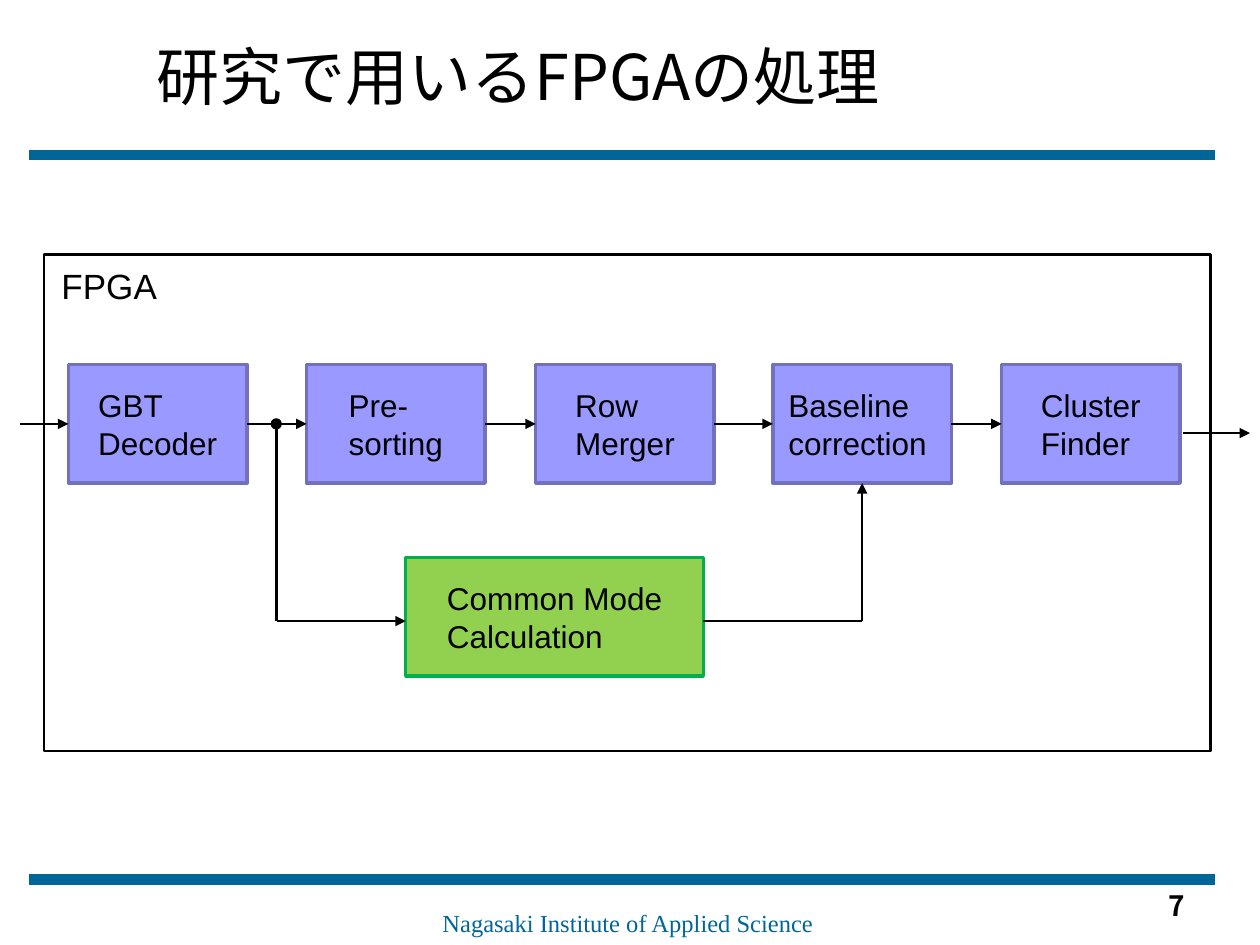
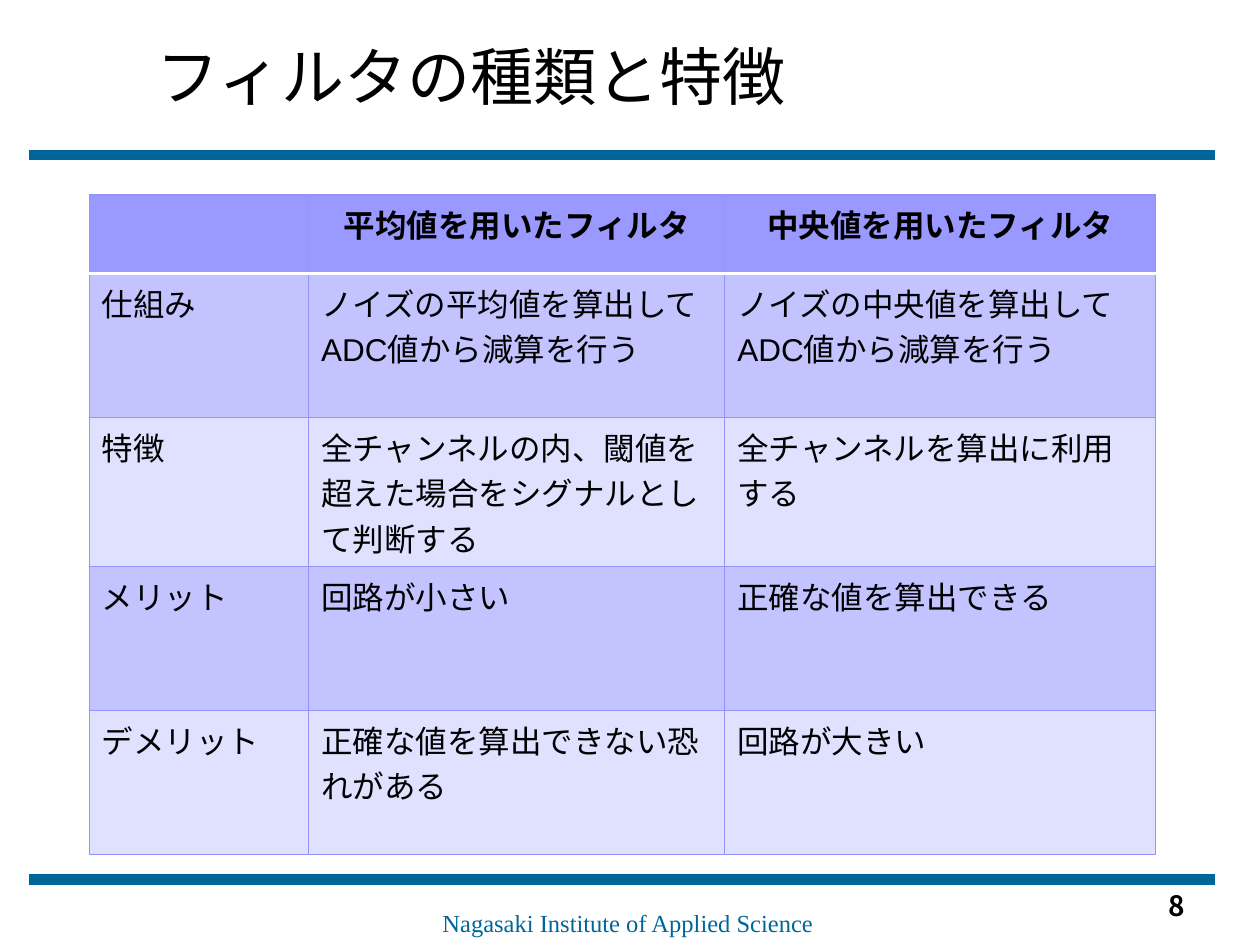
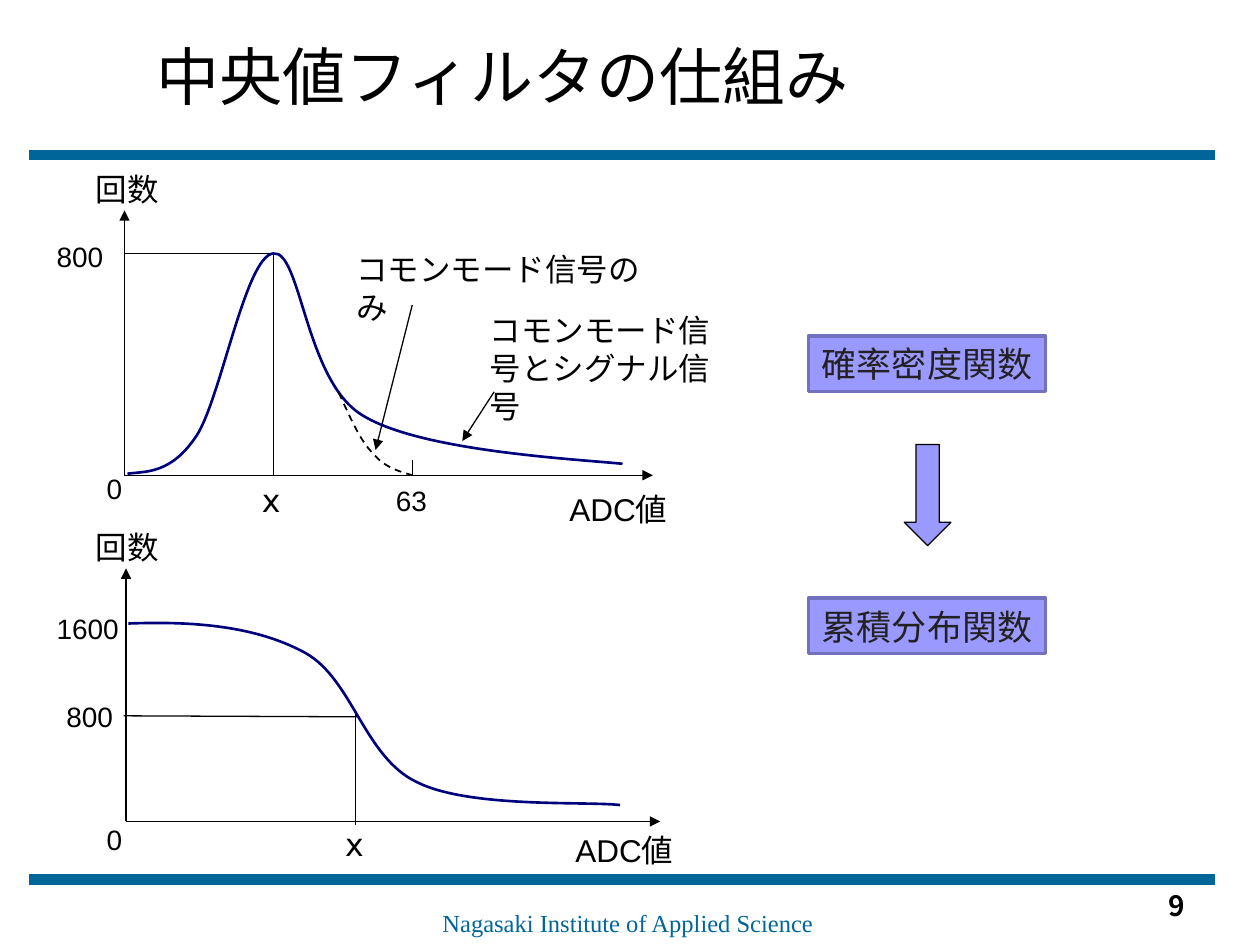
"""Build three slides on FPGA processing and the median filter."""
from dataclasses import dataclass

from lxml import etree
from pptx import Presentation
from pptx.dml.color import RGBColor
from pptx.enum.dml import MSO_LINE
from pptx.enum.shapes import MSO_CONNECTOR, MSO_SHAPE
from pptx.enum.text import MSO_ANCHOR, MSO_AUTO_SIZE, PP_ALIGN
from pptx.oxml.ns import qn
from pptx.util import Cm, Pt

STRAIGHT = MSO_CONNECTOR.STRAIGHT
RECT = MSO_SHAPE.RECTANGLE
DOT = MSO_SHAPE.FLOWCHART_CONNECTOR
DOWN = MSO_SHAPE.DOWN_ARROW
LEFT, CENTER = PP_ALIGN.LEFT, PP_ALIGN.CENTER
TOP, MIDDLE = MSO_ANCHOR.TOP, MSO_ANCHOR.MIDDLE
DASH = MSO_LINE.DASH
NO_FIT = MSO_AUTO_SIZE.NONE


@dataclass(frozen=True)
class Theme:
    latin: str = "Arial"
    cjk: str = "Noto Sans CJK JP"
    serif: str = "Times New Roman"
    black: str = "000000"
    ink: str = "222222"
    band: str = "006699"
    box: str = "9999FF"
    edge: str = "7171BD"
    green: str = "92D050"
    green_edge: str = "00B050"
    curve: str = "00007D"
    grid: str = "9393FC"
    white: str = "FFFFFF"
    row_dark: str = "C3C3FF"
    row_light: str = "E0E0FF"
    title: int = 36
    large: int = 20
    body: int = 18
    small: int = 16
    footer: int = 14


T = Theme()


def text(tf, content, size=T.body, font=T.latin, ea=None, color=T.black,
         bold=False, align=LEFT, anchor=TOP, wrap=True, block=False):
    """Write lines of text into a frame with one format."""
    tf.word_wrap = wrap
    tf.auto_size = NO_FIT
    tf.vertical_anchor = anchor
    if block:
        tf._txBody.find(qn("a:bodyPr")).set("anchorCtr", "1")
    for i, part in enumerate(content.split("\n")):
        p = tf.add_paragraph() if i else tf.paragraphs[0]
        p.alignment = align
        r = p.add_run()
        r.text = part
        r.font.size = Pt(size)
        r.font.bold = bold
        r.font.color.rgb = RGBColor.from_string(color)
        r.font.name = font
        rpr = r._r.get_or_add_rPr()
        etree.SubElement(rpr, qn("a:ea")).set("typeface", ea or font)


def line(s, x1, y1, x2, y2, arrow=False, width=0.75, color=T.black):
    """Draw a straight line, with an arrowhead at its end if asked."""
    c = s.shapes.add_connector(STRAIGHT, Cm(x1), Cm(y1), Cm(x2), Cm(y2))
    c.line.color.rgb = RGBColor.from_string(color)
    c.line.width = Pt(width)
    sp_pr = c._element.spPr
    if arrow:
        etree.SubElement(sp_pr.find(qn("a:ln")), qn("a:tailEnd")).set("type", "triangle")
    etree.SubElement(sp_pr, qn("a:effectLst"))
    return c


prs = Presentation()
prs.slide_width, prs.slide_height = Cm(25.4), Cm(19.05)

slides = []
titles = ["研究で用いるFPGAの処理", "フィルタの種類と特徴", "中央値フィルタの仕組み"]
for page, title in enumerate(titles, 7):
    s = prs.slides.add_slide(prs.slide_layouts[5])
    slides.append(s)
    sp = s.shapes.title
    sp.left, sp.top, sp.width, sp.height = Cm(2.9), Cm(0.33), Cm(21.23), Cm(2.39)
    text(sp.text_frame, title, size=T.title, font=T.cjk, anchor=MIDDLE)
    for y in (3.12, 17.73):
        line(s, 0.58, y, 24.5, y, width=6, color=T.band)
    sp = s.shapes.add_textbox(Cm(8.67), Cm(18.19), Cm(8.05), Cm(0.86))
    text(sp.text_frame, "Nagasaki Institute of Applied Science", size=T.footer,
         font=T.serif, color=T.band, wrap=False)
    sp = s.shapes.add_textbox(Cm(23.31), Cm(17.78), Cm(1.57), Cm(0.94))
    text(sp.text_frame, str(page), size=T.small, font=T.cjk, bold=True)
flow, compare, median = slides

stages = [("GBT\nDecoder", 1.38), ("Pre-sorting", 6.18), ("Row Merger", 10.8),
          ("Baseline correction", 15.58), ("Cluster Finder", 20.19)]
branch_x, stage_y, stage_h = 5.58, 7.35, 2.39
mid_y = stage_y + stage_h / 2

stage_style = (T.box, T.edge, 2, T.body, T.black)
function_style = (T.box, T.edge, 2, T.large, T.ink)
shapes = [(flow, RECT, "", (0.89, 5.13, 23.52, 10.01), (None, T.black, 1.5, 0, ""))]
shapes += [(flow, RECT, name, (x, stage_y, 3.6, stage_h), stage_style) for name, x in stages]
shapes += [
    (flow, RECT, "Common Mode Calculation", (8.18, 11.24, 6, stage_h),
     (T.green, T.green_edge, 2, T.body, T.black)),
    (flow, DOT, "", (branch_x - 0.11, mid_y - 0.1, 0.2, 0.2), (T.black, T.black, 0.75, 0, "")),
    (median, RECT, "確率密度関数", (16.3, 6.77, 4.78, 1.12), function_style),
    (median, RECT, "累積分布関数", (16.3, 12.06, 4.78, 1.12), function_style),
    (median, DOWN, "", (18.23, 8.96, 0.94, 2.04), (T.box, T.black, 0.75, 0, "")),
]
boxes = {}
for s, kind, label, place, (fill, edge, weight, size, color) in shapes:
    sp = s.shapes.add_shape(kind, *[Cm(v) for v in place])
    sp.shadow.inherit = False
    if fill:
        sp.fill.solid()
        sp.fill.fore_color.rgb = RGBColor.from_string(fill)
    else:
        sp.fill.background()
    sp.line.color.rgb = RGBColor.from_string(edge)
    sp.line.width = Pt(weight)
    if label:
        text(sp.text_frame, label, size=size, color=color, anchor=MIDDLE,
             wrap=s is flow, block=True)
        boxes[label] = sp

chain = [boxes[name] for name, x in stages]
chain[3].text_frame.margin_right = Cm(0.43)
merge_x, low_y = 17.38, 12.52
routes = [
    ((0.4, mid_y, 1.38, mid_y, True), None, (chain[0], 1)),
    ((23.85, 8.73, 25.2, 8.73, True), None, None),
    ((branch_x, low_y, 8.18, low_y, True), None, None),
    ((branch_x, mid_y, branch_x, low_y), None, None),
    ((merge_x, low_y, 14.18, low_y), None, None),
    ((merge_x, low_y, merge_x, 9.74, True), None, (chain[3], 2)),
]
routes += [((0, mid_y, 1, mid_y, True), (a, 3), (b, 1)) for a, b in zip(chain, chain[1:])]
for ends, start, end in routes:
    c = line(flow, *ends, width=1.5)
    if start:
        c.begin_connect(*start)
    if end:
        c.end_connect(*end)

rows = [
    ["", "平均値を用いたフィルタ", "中央値を用いたフィルタ"],
    ["仕組み", "ノイズの平均値を算出してADC値から減算を行う",
     "ノイズの中央値を算出してADC値から減算を行う"],
    ["特徴", "全チャンネルの内、閾値を超えた場合をシグナルとして判断する",
     "全チャンネルを算出に利用する"],
    ["メリット", "回路が小さい", "正確な値を算出できる"],
    ["デメリット", "正確な値を算出できない恐れがある", "回路が大きい"],
]
widths, heights = [4.42, 8.39, 8.69], [1.58] + [2.9] * 4
table = compare.shapes.add_table(len(rows), len(widths), Cm(1.8), Cm(3.93),
                                 Cm(sum(widths)), Cm(sum(heights))).table
for column, width in zip(table.columns, widths):
    column.width = Cm(width)
for i, row in enumerate(rows):
    table.rows[i].height = Cm(heights[i])
    for j, content in enumerate(row):
        cell = table.cell(i, j)
        tc_pr = cell._tc.get_or_add_tcPr()
        for side in ("lnL", "lnR", "lnT", "lnB"):
            rule = (i, side) in ((0, "lnB"), (1, "lnT"))
            ln = etree.SubElement(tc_pr, qn("a:" + side))
            ln.set("w", str(Pt(2 if rule else 0.75)))
            solid = etree.SubElement(ln, qn("a:solidFill"))
            etree.SubElement(solid, qn("a:srgbClr")).set("val", T.white if rule else T.grid)
        cell.fill.solid()
        fill = T.box if i == 0 else T.row_dark if i % 2 else T.row_light
        cell.fill.fore_color.rgb = RGBColor.from_string(fill)
        if content:
            text(cell.text_frame, content, ea=T.cjk, bold=i == 0, align=LEFT if i else CENTER)

density_lines = [
    (2.51, 9.58, 2.51, 4.24, True), (2.51, 9.58, 13.16, 9.58, True),
    (5.51, 5.11, 5.51, 9.58), (5.51, 5.11, 2.51, 5.11), (8.31, 9.27, 8.31, 9.6),
    (8.31, 6.15, 7.57, 9.07, True), (9.96, 7.9, 9.32, 8.89, True),
]
cumulative_lines = [
    (2.54, 16.56, 2.54, 11.46, True), (2.54, 16.56, 13.31, 16.56, True),
    (7.16, 14.4, 7.16, 16.64), (2.49, 14.43, 7.2, 14.45),
]
for ends in density_lines + cumulative_lines:
    line(median, *ends)

density = [(2.57, 9.55), (2.97, 9.5), (3.45, 9.55), (3.96, 8.79),
           (4.45, 8.05), (4.95, 5.16), (5.51, 5.11),
           (6.07, 5.03), (6.15, 7.7), (7.32, 8.38),
           (8.48, 9.09), (11.51, 9.25), (12.55, 9.35)]
noise_only = [(6.83, 7.92), (7.06, 8.41), (7.26, 8.89), (7.52, 9.14),
              (7.75, 9.42), (8.03, 9.5), (8.31, 9.58)]
cumulative = [(2.59, 12.57), (3.91, 12.52), (5.16, 12.62), (6.15, 13.16),
              (7.11, 13.69), (7.34, 15.27), (8.41, 15.77),
              (9.47, 16.3), (11.84, 16.15), (12.5, 16.23)]
for knots, color, weight, dash in [(density, T.curve, 1.5, None),
                                   (noise_only, T.black, 1, DASH),
                                   (cumulative, T.curve, 1.5, None)]:
    start, *rest = [(Cm(x), Cm(y)) for x, y in knots]
    builder = median.shapes.build_freeform(*start)
    builder.add_line_segments(rest, close=False)
    sp = builder.convert_to_shape()
    segments = list(sp._element.iter(qn("a:lnTo")))
    outline = segments[0].getparent()
    for k in range(0, len(segments), 3):
        bezier = etree.SubElement(outline, qn("a:cubicBezTo"))
        for segment in segments[k:k + 3]:
            bezier.append(segment[0])
            outline.remove(segment)
    sp.shadow.inherit = False
    sp.fill.background()
    sp.line.color.rgb = RGBColor.from_string(color)
    sp.line.width = Pt(weight)
    if dash:
        sp.line.dash_style = dash

labels = [
    (flow, "FPGA", 0.99, 5.21, 2.5, T.large),
    (median, "回数", 1.68, 3.3, 1.85, T.body),
    (median, "800", 0.89, 4.7, 1.68, T.small),
    (median, "0", 1.9, 9.38, 0.94, T.small),
    (median, "ⅹ", 5.03, 9.58, 0.94, T.body),
    (median, "63", 7.73, 9.63, 1.14, T.small),
    (median, "ADC値", 11.23, 9.75, 2.6, T.body),
    (median, "コモンモード信号のみ", 6.93, 4.91, 6.4, T.body),
    (median, "コモンモード信号とシグナル信号", 9.62, 6.15, 5.41, T.body),
    (median, "回数", 1.68, 10.52, 1.85, T.body),
    (median, "1600", 0.89, 12.2, 1.8, T.small),
    (median, "800", 1.09, 13.97, 1.6, T.small),
    (median, "0", 1.9, 16.46, 0.94, T.small),
    (median, "ⅹ", 6.71, 16.51, 0.94, T.body),
    (median, "ADC値", 11.35, 16.63, 3.38, T.body),
]
for s, content, x, y, width, size in labels:
    sp = s.shapes.add_textbox(Cm(x), Cm(y), Cm(width), Cm(0.94))
    text(sp.text_frame, content, size=size)

prs.save("out.pptx")
